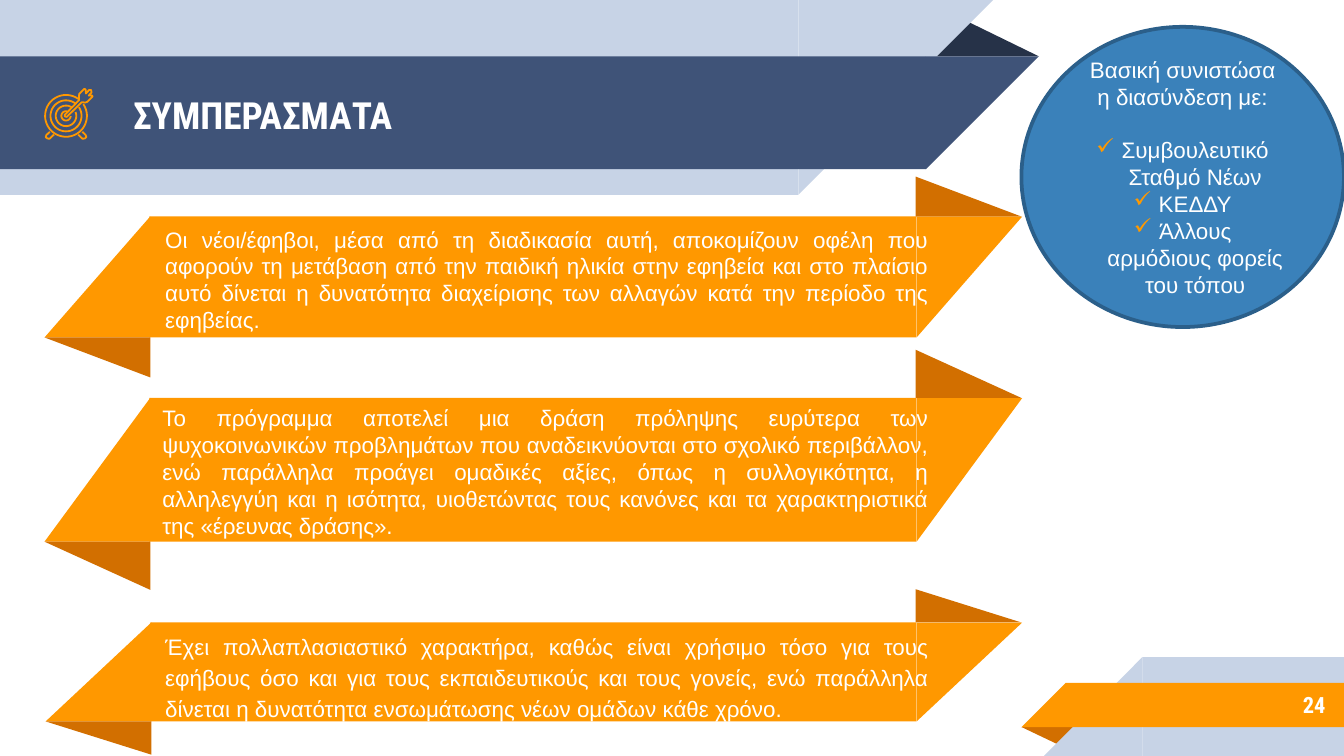
from math import cos, radians, sin

from lxml.etree import SubElement
from pptx import Presentation
from pptx.dml.color import RGBColor
from pptx.enum.shapes import MSO_SHAPE as SHAPE
from pptx.enum.text import MSO_ANCHOR as ANCHOR, MSO_AUTO_SIZE as AUTO, PP_ALIGN as ALIGN
from pptx.oxml.ns import qn
from pptx.util import Pt

WHITE = RGBColor(0xFF, 0xFF, 0xFF)
NAVY = RGBColor(0x3F, 0x53, 0x78)
DARK = RGBColor(0x26, 0x32, 0x48)
PALE = RGBColor(0xC7, 0xD3, 0xE6)
ORANGE = RGBColor(0xFF, 0x98, 0x00)
RUST = RGBColor(0xD2, 0x6F, 0x00)
BLUE = RGBColor(0x3A, 0x81, 0xBA)
BLUE_EDGE = RGBColor(0x2B, 0x5F, 0x8A)
BODY, HEAD = "Arial", "Roboto Condensed"

RIBBONS = [
    (80, 116, 64.8, 21.4, 81.4, 117.4, 423.4, 1.0,
     "Οι νέοι/έφηβοι, μέσα από τη διαδικασία αυτή, αποκομίζουν οφέλη που αφορούν τη "
     "μετάβαση από την παιδική ηλικία στην εφηβεία και στο πλαίσιο αυτό δίνεται η "
     "δυνατότητα διαχείρισης των αλλαγών κατά την περίοδο της εφηβείας."),
    (80, 213.2, 77, 25.8, 79.9, 213.2, 424.9, 1.0,
     "Το πρόγραμμα αποτελεί μια δράση πρόληψης ευρύτερα των ψυχοκοινωνικών προβλημάτων "
     "που αναδεικνύονται στο σχολικό περιβάλλον, ενώ παράλληλα προάγει ομαδικές αξίες, "
     "όπως η συλλογικότητα, η αλληλεγγύη και η ισότητα, υιοθετώντας τους κανόνες και τα "
     "χαρακτηριστικά της «έρευνας δράσης»."),
    (80.6, 333.5, 53, 17.8, 81.4, 333.5, 423.4, 1.15,
     "Έχει πολλαπλασιαστικό χαρακτήρα, καθώς είναι χρήσιμο τόσο για τους εφήβους όσο και "
     "για τους εκπαιδευτικούς και τους γονείς, ενώ παράλληλα δίνεται η δυνατότητα "
     "ενσωμάτωσης νέων ομάδων κάθε χρόνο."),
]
PARTNERS = ["Συμβουλευτικό Σταθμό Νέων", "ΚΕΔΔΥ", "Άλλους αρμόδιους φορείς του τόπου"]

TARGET = (35.4, 62.1)
RINGS = [(11.2, 54, 395), (8.3, 54, 395), (5.5, 57, 385), (2.5, 73, 360)]
FOOT = [(-8.7, 8.5), (-10.5, 10.2), (-10.9, 11.3), (-10, 12.1), (-8.8, 12.2), (-6.5, 10)]
ARROW = [(14, -10.9), (12.2, -10.9), (13.7, -12.6), (13.4, -13.9), (12.4, -13.9),
         (10.7, -12), (10.5, -14), (9.9, -14.6), (7.1, -11.8), (6.9, -10.6),
         (7, -8.5), (-0.7, -0.5), (-0.6, 0.3), (0.4, 0.5), (8.4, -7.3),
         (10.4, -7.2), (11.3, -7.5), (14.2, -10.3)]


class Deck:
    def __init__(self):
        self.prs = Presentation()
        self.prs.slide_width, self.prs.slide_height = Pt(720), Pt(405)
        self.s = self.prs.slides.add_slide(self.prs.slide_layouts[5])

    def shape(self, kind, x, y, w, h, color, flip=False, rot=0, adj=None):
        sp = self.s.shapes.add_shape(kind, Pt(x), Pt(y), Pt(w), Pt(h))
        sp.shadow.inherit = False
        sp.fill.solid()
        sp.fill.fore_color.rgb = color
        sp.line.fill.background()
        sp.rotation = rot
        if flip:
            sp.element.spPr.find(qn("a:xfrm")).set("flipH", "1")
        if adj is not None:
            sp.adjustments[0] = adj
        return sp

    def slanted_right(self, x, y, w, h, tip, color):
        self.shape(SHAPE.RECTANGLE, x, y, w, h, color)
        self.shape(SHAPE.RIGHT_TRIANGLE, x + w, y, tip, h, color, flip=True, rot=180)

    def slanted_left(self, x, y, w, h, tip, color):
        self.shape(SHAPE.RECTANGLE, x, y, w, h, color)
        self.shape(SHAPE.RIGHT_TRIANGLE, x - tip, y, tip, h, color, flip=True)

    def ribbon(self, x, y, h, fold):
        tip, right = 56.6, 491
        self.shape(SHAPE.ISOSCELES_TRIANGLE, right - 0.5, y - fold, tip, fold, RUST, adj=0)
        self.slanted_right(x, y, right - x, h, tip, ORANGE)
        self.shape(SHAPE.RIGHT_TRIANGLE, x - tip + 0.5, y, tip, h, ORANGE, flip=True)
        self.shape(SHAPE.ISOSCELES_TRIANGLE, x - tip + 0.5, y + h, tip, fold, RUST, rot=180, adj=0)

    def outline(self, center, offsets, closed=False):
        cx, cy = center
        points = [(Pt(cx + dx), Pt(cy + dy)) for dx, dy in offsets]
        builder = self.s.shapes.build_freeform(*points[0])
        builder.add_line_segments(points[1:], close=closed)
        sp = builder.convert_to_shape()
        sp.shadow.inherit = False
        sp.fill.background()
        sp.line.color.rgb = ORANGE
        sp.line.width = Pt(0.96)

    def ring(self, center, radius, start, end):
        angles = [radians(a) for a in range(start, end + 1, 5)]
        self.outline(center, [(radius * cos(a), -radius * sin(a)) for a in angles])

    def format(self, p, size, font=BODY, bold=False, align=None):
        p.alignment = align
        for r in p.runs:
            r.font.size, r.font.name, r.font.bold = Pt(size), font, bold
            r.font.color.rgb = WHITE

    def text(self, x, y, w, h, text, spacing=1.0):
        tf = self.s.shapes.add_textbox(Pt(x), Pt(y), Pt(w), Pt(h)).text_frame
        tf.word_wrap = True
        tf.auto_size = AUTO.SHAPE_TO_FIT_TEXT
        tf.text = text
        p = tf.paragraphs[0]
        p.line_spacing = spacing
        self.format(p, 12, align=ALIGN.JUSTIFY)
        return tf

    def title(self, x, y, w, h, text):
        sp = self.s.shapes.title
        sp.left, sp.top, sp.width, sp.height = Pt(x), Pt(y), Pt(w), Pt(h)
        sp.element.getparent().append(sp.element)
        tf = sp.text_frame
        tf.text = text
        tf.vertical_anchor = ANCHOR.MIDDLE
        self.format(tf.paragraphs[0], 20, HEAD, True, ALIGN.LEFT)

    def page_number(self, x, y, w, h, number):
        tf = self.text(x, y, w, h, number)
        tf.auto_size = AUTO.NONE
        tf.vertical_anchor = ANCHOR.MIDDLE
        self.format(tf.paragraphs[0], 12, HEAD, True, ALIGN.RIGHT)

    def check_bullet(self, p):
        pPr = p._p.get_or_add_pPr()
        pPr.set("marL", str(Pt(13.5)))
        pPr.set("indent", str(-Pt(13.5)))
        color = SubElement(pPr, qn("a:buClr"))
        SubElement(color, qn("a:srgbClr")).set("val", "FF9900")
        SubElement(pPr, qn("a:buChar")).set("char", "✓")

    def circle(self, x, y, w, h, heading, items):
        sp = self.shape(SHAPE.OVAL, x, y, w, h, BLUE)
        sp.line.color.rgb = BLUE_EDGE
        sp.line.width = Pt(2)
        tf = sp.text_frame
        tf.word_wrap = True
        tf.vertical_anchor = ANCHOR.MIDDLE
        tf.text = "\n".join([heading] + items)
        for p in tf.paragraphs:
            self.format(p, 12, align=ALIGN.CENTER)
        tf.paragraphs[0].space_after = Pt(14)
        for p in tf.paragraphs[1:]:
            self.check_bullet(p)


def main():
    d = Deck()
    d.shape(SHAPE.ISOSCELES_TRIANGLE, 495.4, 10, 61.2, 20.2, DARK, adj=0.324)
    d.slanted_right(0, 0, 427.6, 104.4, 104.4, PALE)
    d.slanted_right(0, 30.2, 496, 60.5, 60.5, NAVY)
    d.shape(SHAPE.ISOSCELES_TRIANGLE, 547.2, 389.5, 31, 10, RUST, rot=180, adj=0.324)
    d.slanted_left(612, 352.1, 108, 52.9, 52.6, PALE)
    d.slanted_left(571, 365.8, 149, 23.8, 23.8, ORANGE)
    d.title(64.1, 31, 414, 60.5, "ΣΥΜΠΕΡΑΣΜΑΤΑ")
    d.page_number(599.8, 365, 117.4, 25.2, "24")

    for radius, start, end in RINGS:
        d.ring(TARGET, radius, start, end)
    for side in (1, -1):
        d.outline(TARGET, [(side * dx, dy) for dx, dy in FOOT])
    d.outline(TARGET, ARROW, closed=True)

    for x, y, h, fold, *_ in RIBBONS:
        d.ribbon(x, y, h, fold)
    for _, _, h, _, x, y, w, spacing, text in RIBBONS:
        d.text(x, y, w, h, text, spacing)
    d.circle(547.2, 14.4, 172.8, 160.8, "Βασική συνιστώσα η διασύνδεση με:", PARTNERS)
    d.prs.save("out.pptx")


if __name__ == "__main__":
    main()
